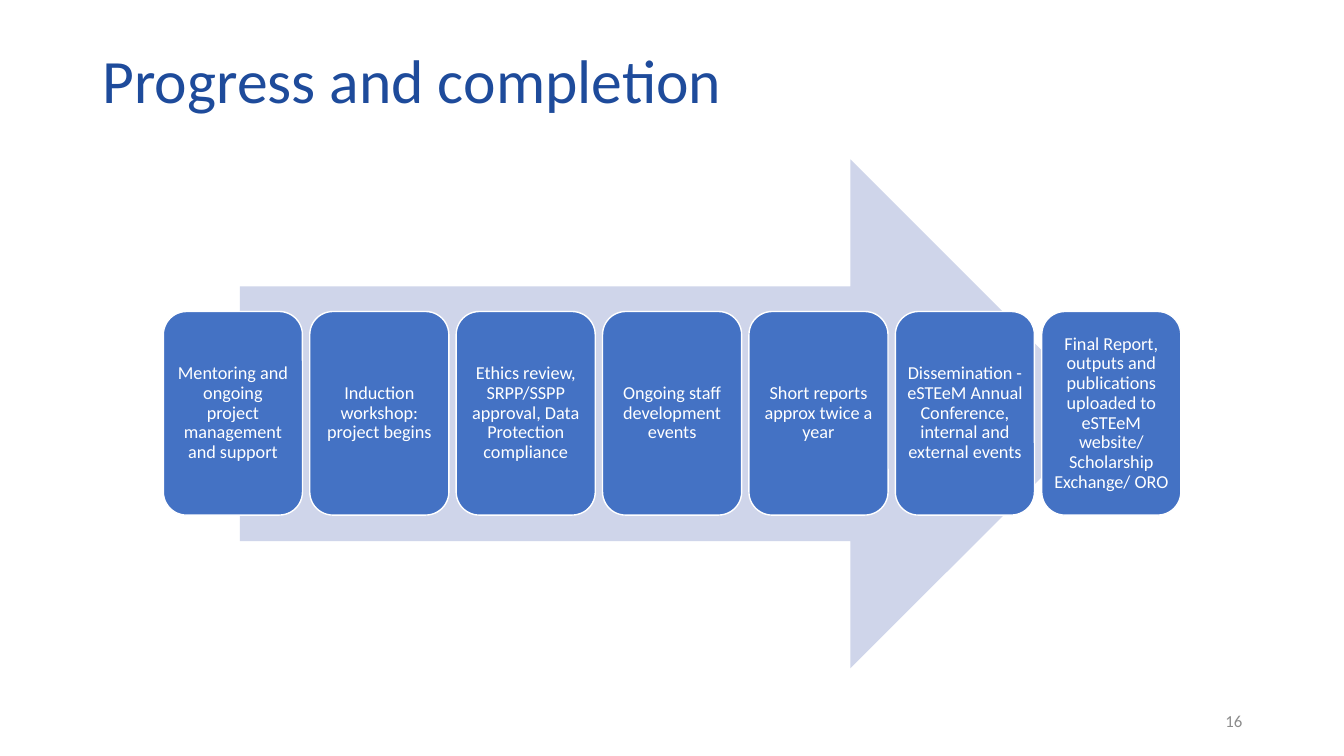
from pptx import Presentation
from pptx.dml.color import RGBColor
from pptx.enum.shapes import MSO_SHAPE
from pptx.enum.text import MSO_ANCHOR, PP_ALIGN
from pptx.util import Inches, Pt


def rgb(value):
    return RGBColor.from_string(value)


def write(sp, text, size, color, align, spacing=1.0):
    """Fill a shape with one vertically centred paragraph."""
    tf = sp.text_frame
    tf.word_wrap = True
    tf.vertical_anchor = MSO_ANCHOR.MIDDLE
    p = tf.paragraphs[0]
    p.alignment = align
    p.line_spacing = spacing
    r = p.add_run()
    r.text = text
    r.font.name = "Calibri"
    r.font.size = Pt(size)
    r.font.color.rgb = rgb(color)


STEPS = [
    "Mentoring and ongoing project management and support",
    "Induction workshop: project begins",
    "Ethics review, SRPP/SSPP approval, Data Protection compliance",
    "Ongoing staff development events",
    "Short reports approx twice a year",
    "Dissemination - eSTEeM Annual Conference, internal and external events",
    "Final Report, outputs and publications uploaded to eSTEeM website/ "
    "Scholarship Exchange/ ORO",
]
STEP_LEFT, STEP_TOP = 1.62, 3.09
STEP_WIDTH, STEP_HEIGHT = 1.38, 2.02
STEP_PITCH = 1.452
STEP_INSET = Inches(0.05)

prs = Presentation()
prs.slide_width = Inches(13.33)
prs.slide_height = Inches(7.5)
s = prs.slides.add_slide(prs.slide_layouts[6])

title = s.shapes.add_textbox(Inches(0.92), Inches(0.4), Inches(11.5), Inches(0.85))
write(title, "Progress and completion", 44, "1E4B9B", PP_ALIGN.LEFT, 0.9)

number = s.shapes.add_textbox(Inches(9.42), Inches(6.95), Inches(3), Inches(0.4))
write(number, "16", 12, "8C8C8C", PP_ALIGN.RIGHT)

arrow = s.shapes.add_shape(
    MSO_SHAPE.RIGHT_ARROW, Inches(2.38), Inches(1.58), Inches(8.58), Inches(5.05))
arrow.shadow.inherit = False
arrow.fill.solid()
arrow.fill.fore_color.rgb = rgb("CFD5EA")
arrow.line.fill.background()

for i, step in enumerate(STEPS):
    sp = s.shapes.add_shape(
        MSO_SHAPE.ROUNDED_RECTANGLE, Inches(STEP_LEFT + i * STEP_PITCH),
        Inches(STEP_TOP), Inches(STEP_WIDTH), Inches(STEP_HEIGHT))
    sp.shadow.inherit = False
    sp.fill.solid()
    sp.fill.fore_color.rgb = rgb("4472C4")
    sp.line.color.rgb = rgb("FFFFFF")
    sp.line.width = Pt(1)
    tf = sp.text_frame
    tf.margin_left = tf.margin_right = STEP_INSET
    tf.margin_top = tf.margin_bottom = STEP_INSET
    write(sp, step, 13, "FFFFFF", PP_ALIGN.CENTER, 0.9)

prs.save("out.pptx")
